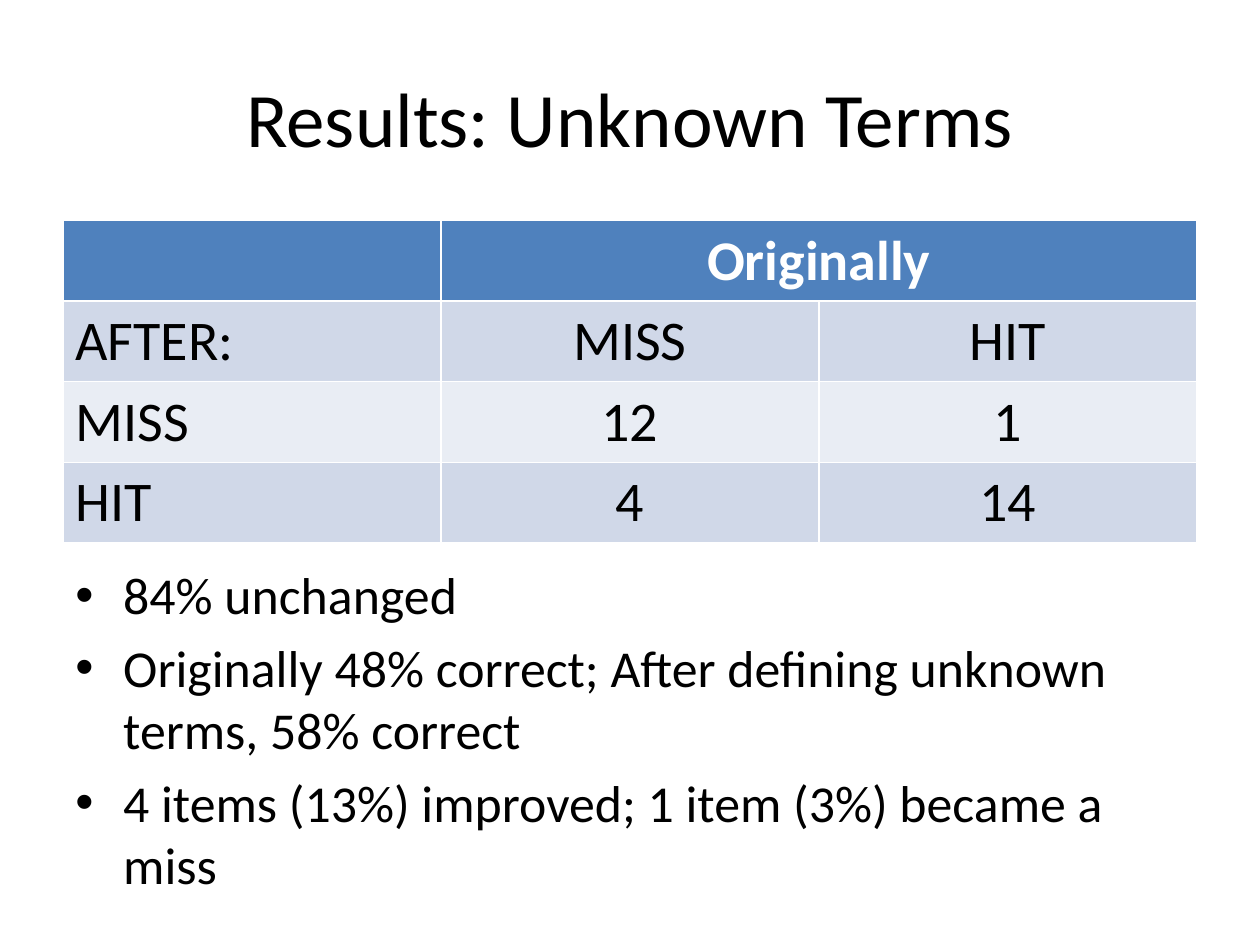
from lxml import etree
from pptx import Presentation, util as u
from pptx.dml.color import RGBColor
from pptx.enum import text
from pptx.oxml import ns

BLACK = RGBColor(0x00, 0x00, 0x00)
WHITE = RGBColor(0xFF, 0xFF, 0xFF)
HEADER_BLUE = RGBColor(0x4F, 0x81, 0xBD)
BAND_DARK = RGBColor(0xD0, 0xD8, 0xE8)
BAND_LIGHT = RGBColor(0xE9, 0xED, 0xF4)

LEFT, WIDTH = 0.5, 9
CENTER = text.PP_ALIGN.CENTER


class SlideBuilder:
    font_name = "Calibri"

    def __init__(self, slide):
        self.slide = slide

    def style(self, paragraph, size, color=BLACK, bold=False, align=text.PP_ALIGN.LEFT):
        paragraph.alignment = align
        font = paragraph.font
        font.name, font.size, font.bold = self.font_name, u.Pt(size), bold
        font.color.rgb = color

    def text_frame(self, top, height, anchor):
        box = self.slide.shapes.add_textbox(
            u.Inches(LEFT), u.Inches(top), u.Inches(WIDTH), u.Inches(height))
        frame = box.text_frame
        frame.word_wrap = True
        frame.vertical_anchor = anchor
        return frame

    def title(self, wording, top, height):
        paragraph = self.text_frame(top, height, text.MSO_ANCHOR.MIDDLE).paragraphs[0]
        paragraph.text = wording
        self.style(paragraph, 44, align=CENTER)

    def table(self, rows, top, row_height, size):
        """Add a banded table whose header spans all columns but the first."""
        table = self.slide.shapes.add_table(
            len(rows), len(rows[0]), u.Inches(LEFT), u.Inches(top),
            u.Inches(WIDTH), u.Inches(row_height * len(rows))).table
        for row_index, row in enumerate(rows):
            header = row_index == 0
            band = BAND_DARK if row_index % 2 else BAND_LIGHT
            for column_index, wording in enumerate(row):
                cell = table.cell(row_index, column_index)
                cell.fill.solid()
                cell.fill.fore_color.rgb = HEADER_BLUE if header else band
                paragraph = cell.text_frame.paragraphs[0]
                paragraph.text = wording
                self.style(paragraph, size, WHITE if header else BLACK, header,
                           CENTER if column_index else text.PP_ALIGN.LEFT)
        table.cell(0, 1).merge(table.cell(0, len(rows[0]) - 1))

    def bullets(self, items, top, height, size):
        frame = self.text_frame(top, height, text.MSO_ANCHOR.TOP)
        for index, item in enumerate(items):
            paragraph = frame.add_paragraph() if index else frame.paragraphs[0]
            paragraph.text = item
            if index:
                paragraph.space_before = u.Pt(6)
            properties = paragraph._p.get_or_add_pPr()
            indent = u.Inches(0.38)
            properties.set("marL", str(indent))
            properties.set("indent", str(-indent))
            bullet_font = etree.SubElement(properties, ns.qn("a:buFont"))
            bullet_font.set("typeface", "Arial")
            etree.SubElement(properties, ns.qn("a:buChar")).set("char", "•")
            self.style(paragraph, size)


def main():
    presentation = Presentation()
    presentation.slide_width, presentation.slide_height = u.Inches(10), u.Inches(7.5)
    slide = presentation.slides.add_slide(presentation.slide_layouts[6])
    builder = SlideBuilder(slide)
    builder.title("Results: Unknown Terms", top=0.3, height=1.25)
    builder.table([
        ["", "Originally", ""],
        ["AFTER:", "MISS", "HIT"],
        ["MISS", "12", "1"],
        ["HIT", "4", "14"],
    ], top=1.75, row_height=0.64, size=32)
    builder.bullets([
        "84% unchanged",
        "Originally 48% correct; After defining unknown terms, 58% correct",
        "4 items (13%) improved; 1 item (3%) became a miss",
    ], top=4.42, height=2.58, size=29.6)
    presentation.save("out.pptx")


if __name__ == "__main__":
    main()
